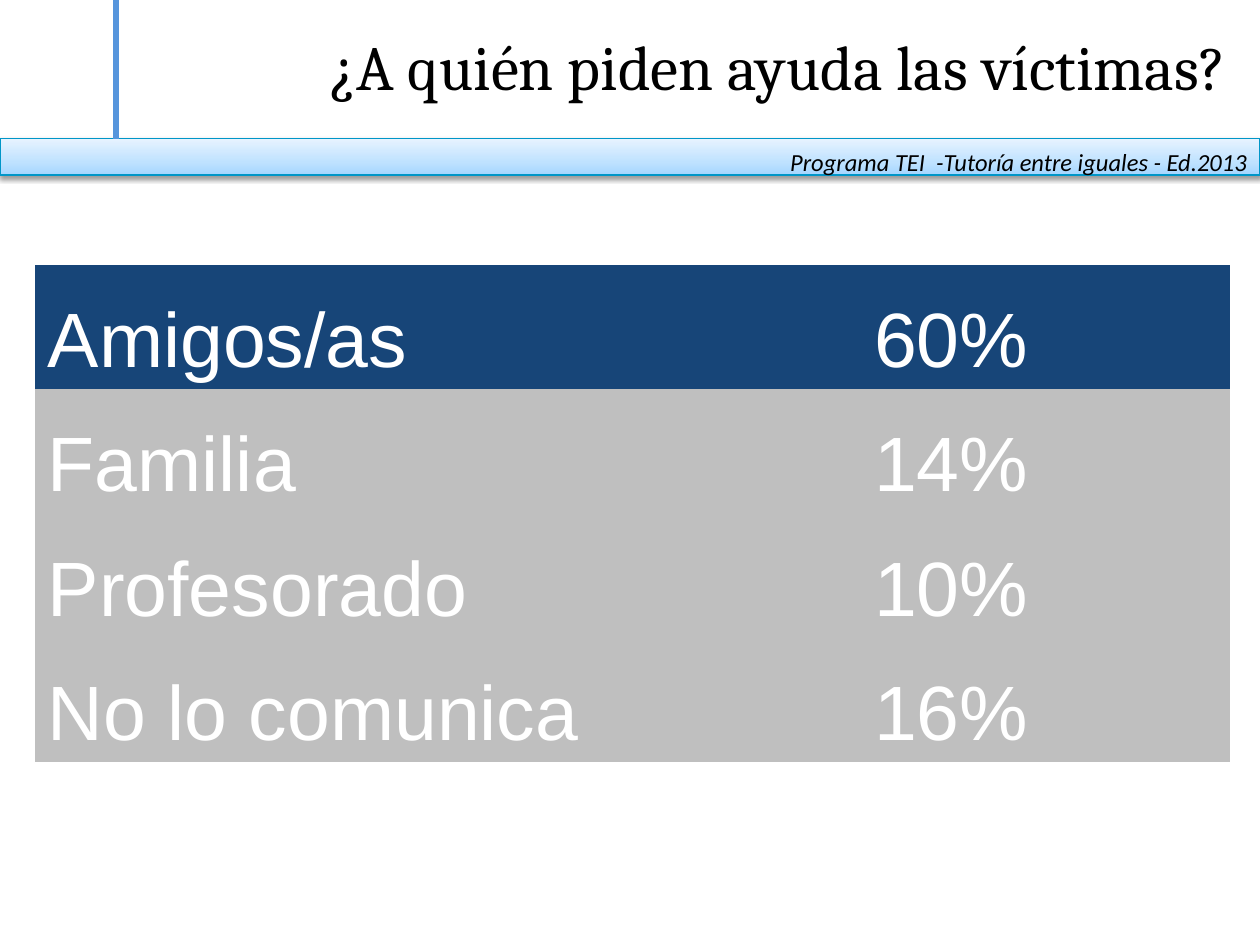
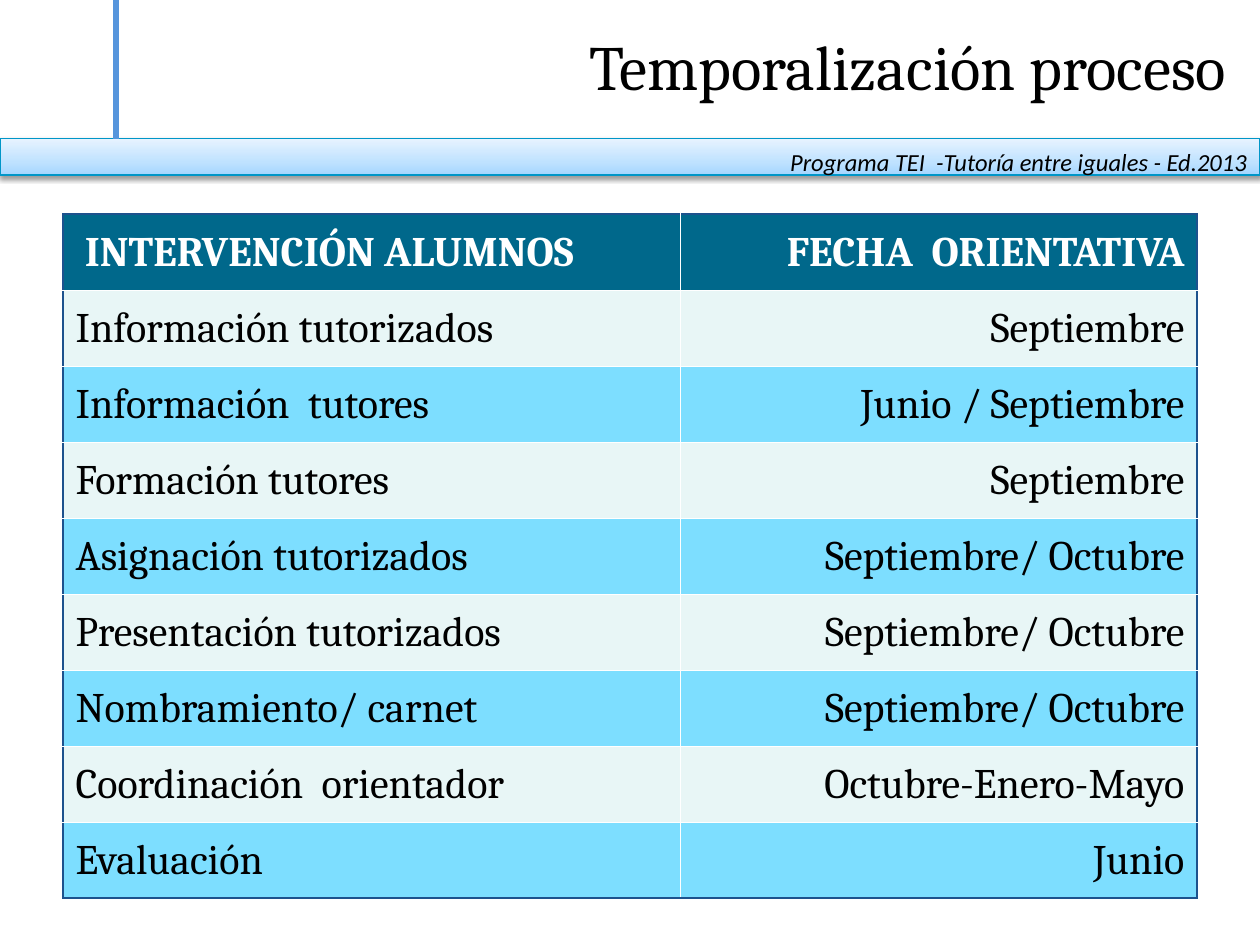
import copy
from dataclasses import dataclass

import lxml.etree
import pptx
import pptx.dml.color
import pptx.enum.shapes
import pptx.enum.text
import pptx.oxml.ns
import pptx.util

UNIT = pptx.util.Inches(0.1)
COLUMNS, ROWS = 100, 75
TITLE_ONLY = 5
PLAIN_TABLE = "{2D5ABB26-0587-4C30-8999-92F81FD0307C}"
ALIGN = pptx.enum.text.PP_ALIGN
ANCHOR = pptx.enum.text.MSO_ANCHOR

BLACK, WHITE = "000000", "FFFFFF"
BAND_STOPS = [(0, "A5D6FF"), (0.35, "BFE2FF"), (1, "E7F3FF")]
BAND_EDGE, RULE_BLUE = "0096C8", "5695DC"
NAVY, GREY = "174578", "BFBFBF"
TEAL, PALE, SKY, FRAME = "00688B", "E8F6F6", "7DDEFF", "1D528D"

HELPERS = [
    ("Amigos/as", "60%"),
    ("Familia", "14%"),
    ("Profesorado", "10%"),
    ("No lo comunica", "16%"),
]
SCHEDULE = [
    (" INTERVENCIÓN ALUMNOS", "FECHA  ORIENTATIVA"),
    ("Información tutorizados", "Septiembre"),
    ("Información  tutores", "Junio / Septiembre"),
    ("Formación tutores", "Septiembre"),
    ("Asignación tutorizados", "Septiembre/ Octubre"),
    ("Presentación tutorizados", "Septiembre/ Octubre"),
    ("Nombramiento/ carnet", "Septiembre/ Octubre"),
    ("Coordinación  orientador", "Octubre-Enero-Mayo"),
    ("Evaluación", "Junio"),
]


@dataclass
class Box:
    left: float
    top: float
    width: float
    height: float

    def place(self):
        return [grid(n) for n in (self.left, self.top, self.width, self.height)]


HEADER = Box(0, 0, COLUMNS, 13.9)
HELPERS_BOX = Box(2.8, 21, 94.8, 38)
SCHEDULE_BOX = Box(5, 17, 90, 54.3)


def grid(count):
    return pptx.util.Emu(round(count * UNIT))


def color(value):
    return pptx.dml.color.RGBColor.from_string(value)


def add_element(parent, tag, **attributes):
    return lxml.etree.SubElement(parent, pptx.oxml.ns.qn(tag), attributes)


def add_solid(parent, value):
    solid = add_element(parent, "a:solidFill")
    return add_element(solid, "a:srgbClr", val=value)


def style(para, name, size, value, align, bold=False, italic=False):
    para.alignment = align
    font = para.font
    font.name, font.size = name, pptx.util.Pt(size)
    font.bold, font.italic = bold, italic
    font.color.rgb = color(value)


def add_band(page, box):
    band = page.shapes.add_shape(pptx.enum.shapes.MSO_SHAPE.RECTANGLE, *box.place())
    band.fill.gradient()
    band.fill.gradient_angle = 90
    stops = band._element.spPr.find(".//" + pptx.oxml.ns.qn("a:gsLst"))
    stops.insert(1, copy.deepcopy(stops[0]))
    for stop, (position, value) in zip(band.fill.gradient_stops, BAND_STOPS):
        stop.position = position
        stop.color.rgb = color(value)
    band.line.color.rgb = color(BAND_EDGE)
    band.line.width = pptx.util.Pt(0.75)
    band.shadow.inherit = False
    effects = band._element.spPr.find(pptx.oxml.ns.qn("a:effectLst"))
    shadow = add_element(
        effects, "a:outerShdw", blurRad=str(pptx.util.Pt(3.1)),
        dist=str(pptx.util.Pt(1.6)), dir="5400000", rotWithShape="0",
    )
    tint = add_element(shadow, "a:srgbClr", val=BLACK)
    add_element(tint, "a:alpha", val="38000")


def add_rule(page, across, top, bottom):
    rule = page.shapes.add_connector(
        pptx.enum.shapes.MSO_CONNECTOR.STRAIGHT,
        grid(across), grid(top), grid(across), grid(bottom),
    )
    rule.line.color.rgb = color(RULE_BLUE)
    rule.line.width = pptx.util.Pt(3)
    add_element(rule._element.spPr, "a:effectLst")


def add_edition(page, box):
    frame = page.shapes.add_textbox(*box.place()).text_frame
    frame.word_wrap = True
    frame.text = "Programa TEI  -Tutoría entre iguales - Ed.2013"
    style(frame.paragraphs[0], "Calibri", 14, BLACK, ALIGN.RIGHT, italic=True)


def set_title(page, box, text):
    title = page.shapes.title
    title.left, title.top, title.width, title.height = box.place()
    frame = title.text_frame
    frame.text = text
    frame.auto_size = pptx.enum.text.MSO_AUTO_SIZE.NONE
    frame.vertical_anchor = ANCHOR.MIDDLE
    style(frame.paragraphs[0], "Cambria", 36, BLACK, ALIGN.RIGHT)


def add_header(page, box, text):
    band_top = box.top + box.height - 2.9
    add_band(page, Box(box.left, band_top, box.width, 2.9))
    add_rule(page, box.left + 9.2, box.top, band_top)
    add_edition(page, Box(box.left + box.width - 39, band_top + 0.2, 39, 5.7))
    set_title(page, Box(box.left + 2.5, box.top + 1.7, box.width - 4.2, 7), text)


def add_plain_table(page, box, entries, weights):
    shape = page.shapes.add_table(len(entries), len(weights), *box.place())
    table = shape.table
    table.first_row = table.horz_banding = False
    table._tbl.tblPr.find(pptx.oxml.ns.qn("a:tableStyleId")).text = PLAIN_TABLE
    for column, weight in zip(table.columns, weights):
        column.width = grid(box.width * weight / sum(weights))
    for row in table.rows:
        row.height = grid(box.height / len(entries))
    return table


def fill_cell(cell, text, fill, top_inset, spacing, **look):
    cell.fill.solid()
    cell.fill.fore_color.rgb = color(fill)
    cell.vertical_anchor = ANCHOR.MIDDLE
    cell.margin_left = cell.margin_right = pptx.util.Inches(0.1)
    cell.margin_top = pptx.util.Inches(top_inset)
    cell.margin_bottom = pptx.util.Inches(0.05)
    cell.text = text
    para = cell.text_frame.paragraphs[0]
    para.line_spacing = spacing
    style(para, **look)


def add_borders(cell, borders):
    properties = cell._tc.get_or_add_tcPr()
    for side, (value, width) in zip("LRTB", borders):
        line = add_element(properties, "a:ln" + side, w=str(pptx.util.Pt(width)))
        add_solid(line, value)


def add_helpers_table(page, box):
    table = add_plain_table(page, box, HELPERS, (5.06, 4.42))
    for row, entry in enumerate(HELPERS):
        for column, text in enumerate(entry):
            fill_cell(
                table.cell(row, column), text, GREY if row else NAVY, 0.38, 0.76,
                name="Arial", size=44, value=WHITE,
                align=ALIGN.CENTER if column else ALIGN.LEFT,
            )


def add_schedule_table(page, box):
    table = add_plain_table(page, box, SCHEDULE, (4.9, 4.11))
    outer, hairline, thin = (FRAME, 1), (WHITE, 0.11), (WHITE, 0.34)
    last = len(SCHEDULE) - 1
    levels = [outer, thin, thin] + [hairline] * (last - 2) + [outer]
    for row, entry in enumerate(SCHEDULE):
        heading = row == 0
        fill = TEAL if heading else (SKY, PALE)[row % 2]
        for column, text in enumerate(entry):
            cell = table.cell(row, column)
            sides = (hairline, outer) if column else (outer, hairline)
            add_borders(cell, (*sides, levels[row], levels[row + 1]))
            fill_cell(
                cell, text, fill, 0.05, 1.02,
                name="Cambria", size=24, value=WHITE if heading else BLACK,
                align=ALIGN.RIGHT if column else ALIGN.LEFT, bold=heading,
            )


def add_page(deck, title, add_table, box):
    page = deck.slides.add_slide(deck.slide_layouts[TITLE_ONLY])
    add_header(page, HEADER, title)
    add_table(page, box)


def main():
    deck = pptx.Presentation()
    deck.slide_width, deck.slide_height = grid(COLUMNS), grid(ROWS)
    add_page(deck, "¿A quién piden ayuda las víctimas?", add_helpers_table, HELPERS_BOX)
    add_page(deck, "Temporalización proceso", add_schedule_table, SCHEDULE_BOX)
    deck.save("out.pptx")


if __name__ == "__main__":
    main()
